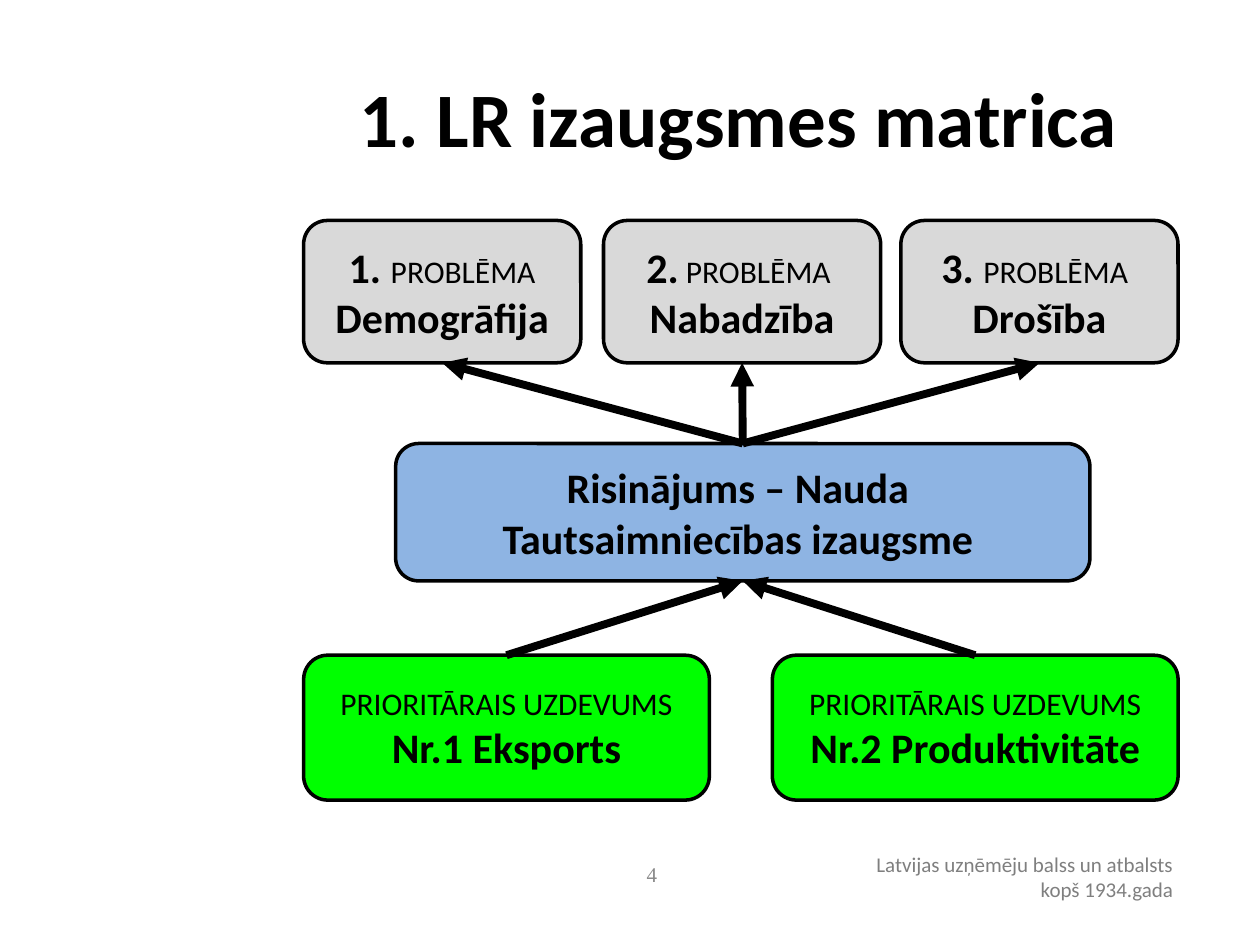
from lxml.etree import SubElement
from pptx import Presentation
from pptx.dml.color import RGBColor
from pptx.enum.shapes import MSO_CONNECTOR, MSO_SHAPE
from pptx.enum.text import MSO_ANCHOR, PP_ALIGN
from pptx.oxml.ns import qn
from pptx.util import Inches, Pt

BLACK, WHITE, GRAY, BLUE, GREEN = "000000", "FFFFFF", "D9D9D9", "8EB4E3", "00FF00"
TOP, BOTTOM = 0, 2  # connection sites of a rounded rectangle

LARGE = {"size": Pt(24), "bold": True}
SMALL = {"size": Pt(18), "bold": False}
PLAIN = {"size": Pt(12), "bold": False}

# Each box text is a list of paragraphs, each a list of (text, format) runs.
PROBLEMS = [
    (2.41, [[("1. ", LARGE), ("PROBLĒMA", SMALL), (" Demogrāfija", LARGE)]]),
    (4.79, [[("2.", LARGE), (" PROBLĒMA ", SMALL)], [("Nabadzība", LARGE)]]),
    (7.15, [[("3. ", LARGE), ("PROBLĒMA", SMALL), (" ", LARGE)], [("Drošība", LARGE)]]),
]
SOLUTION = [[("Risinājums – Nauda ", LARGE)], [("Tautsaimniecības izaugsme ", LARGE)]]
PRIORITIES = [
    (2.41, [[("PRIORITĀRAIS UZDEVUMS", SMALL)], [("Nr.1 Eksports", LARGE)]]),
    (6.13, [[("PRIORITĀRAIS UZDEVUMS ", SMALL), ("Nr.2 Produktivitāte", LARGE)]]),
]


def color(hex_value):
    return RGBColor.from_string(hex_value)


def write_text(shape, paragraphs, text_color=BLACK, font_name="Calibri",
               alignment=PP_ALIGN.CENTER, anchor=MSO_ANCHOR.MIDDLE):
    frame = shape.text_frame
    frame.word_wrap = True
    frame.vertical_anchor = anchor
    for index, runs in enumerate(paragraphs):
        paragraph = frame.add_paragraph() if index else frame.paragraphs[0]
        paragraph.alignment = alignment
        for text, font_format in runs:
            run = paragraph.add_run()
            run.text = text
            run.font.name = font_name
            run.font.color.rgb = color(text_color)
            for name, value in font_format.items():
                setattr(run.font, name, value)


def add_title(slide, text):
    title = slide.shapes.title
    position = {"left": 2.4, "top": 0.3, "width": 6.93, "height": 1.25}
    for name, value in position.items():
        setattr(title, name, Inches(value))
    write_text(title, [[(text, {"size": Pt(44), "bold": True})]])


def add_text(slide, left, top, width, height, text, **text_format):
    box = slide.shapes.add_textbox(
        Inches(left), Inches(top), Inches(width), Inches(height))
    write_text(box, [[(text, PLAIN)]], **text_format)
    return box


def add_box(slide, left, top, width, height, fill, paragraphs):
    box = slide.shapes.add_shape(
        MSO_SHAPE.ROUNDED_RECTANGLE,
        Inches(left), Inches(top), Inches(width), Inches(height))
    box.shadow.inherit = False
    box.fill.solid()
    box.fill.fore_color.rgb = color(fill)
    box.line.color.rgb = color(BLACK)
    box.line.width = Pt(2)
    write_text(box, paragraphs)
    return box


def add_arrow(slide, lower_box, upper_box):
    """Join the top of the lower box to the bottom of the upper one."""
    arrow = slide.shapes.add_connector(MSO_CONNECTOR.STRAIGHT, 0, 0, 0, 0)
    arrow.begin_connect(lower_box, TOP)
    arrow.end_connect(upper_box, BOTTOM)
    arrow.line.color.rgb = color(BLACK)
    arrow.line.width = Pt(4.5)
    SubElement(arrow.line._get_or_add_ln(), qn("a:tailEnd"), type="triangle")
    SubElement(arrow._element.spPr, qn("a:effectLst"))


def main():
    presentation = Presentation()
    presentation.slide_width = Inches(10)
    presentation.slide_height = Inches(7.5)
    slide = presentation.slides.add_slide(presentation.slide_layouts[5])

    footer = add_text(slide, 6.81, 6.71, 2.6, 0.51,
                      "Latvijas uzņēmēju balss un atbalsts kopš 1934.gada",
                      text_color="7F7F7F", alignment=PP_ALIGN.RIGHT,
                      anchor=MSO_ANCHOR.TOP)
    footer.fill.solid()
    footer.fill.fore_color.rgb = color(WHITE)
    add_title(slide, "1. LR izaugsmes matrica")
    add_text(slide, 4.01, 6.74, 2.33, 0.4, "4",
             text_color="898989", font_name="Times New Roman")

    solution = add_box(slide, 3.14, 3.52, 5.51, 1.09, BLUE, SOLUTION)
    for left, paragraphs in PROBLEMS:
        problem = add_box(slide, left, 1.75, 2.2, 1.13, GRAY, paragraphs)
        add_arrow(slide, solution, problem)
    for left, paragraphs in PRIORITIES:
        priority = add_box(slide, left, 5.2, 3.22, 1.15, GREEN, paragraphs)
        add_arrow(slide, priority, solution)

    presentation.save("out.pptx")


if __name__ == "__main__":
    main()
